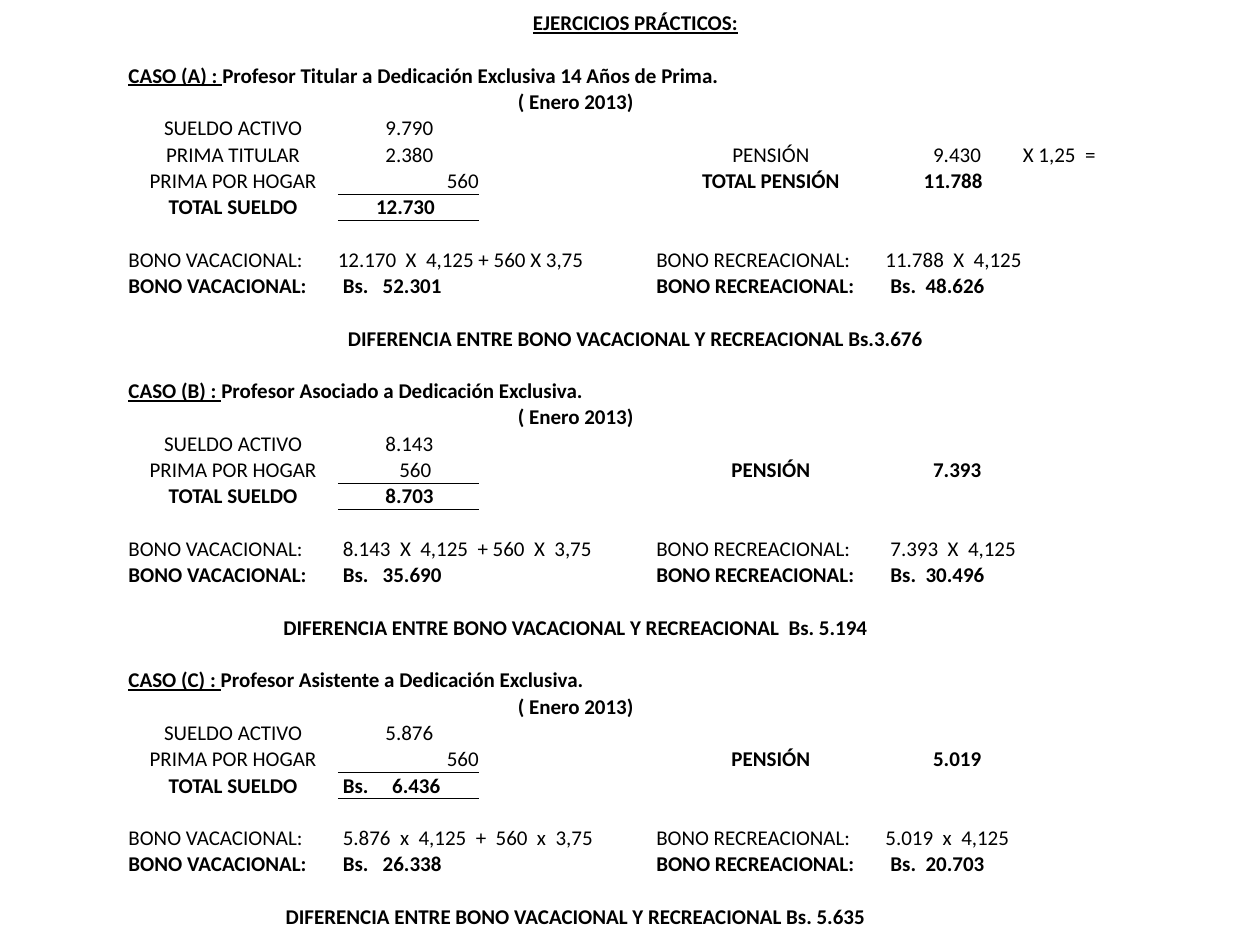
from dataclasses import dataclass

from lxml import etree
from pptx import Presentation
from pptx.dml.color import RGBColor
from pptx.enum.text import MSO_ANCHOR, PP_ALIGN
from pptx.oxml.ns import qn
from pptx.util import Cm, Pt

LEFT, CENTER, RIGHT = PP_ALIGN.LEFT, PP_ALIGN.CENTER, PP_ALIGN.RIGHT
BOTTOM = MSO_ANCHOR.BOTTOM


@dataclass(frozen=True)
class Theme:
    font: str = "Calibri"
    size: int = 12
    filler_size: int = 6
    ink: str = "000000"
    rule_width: float = 0.5
    plain_table: str = "{2D5ABB26-0587-4C30-8999-92F81FD0307C}"


THEME = Theme()

# Content: salary lines are (label, amount, indent in cm, pension);
# an indent of None sets the amount flush right.
# Pension is (label, amount, indent in cm, bold, factor).
TITLE = "EJERCICIOS PRÁCTICOS:"
DATE = "( Enero 2013)"
CASES = [
    {
        "name": "CASO (A) : ",
        "teacher": "Profesor Titular a Dedicación Exclusiva 14 Años de Prima.",
        "salary": [
            ("SUELDO ACTIVO", "9.790", 0.96, None),
            ("PRIMA TITULAR", "2.380", 0.96, ("PENSIÓN", "9.430", 0.96, False, "X 1,25  =")),
            ("PRIMA POR HOGAR", "560", None, ("TOTAL PENSIÓN", "11.788", 0.77, True, "")),
        ],
        "total": ("12.730", 0.77),
        "holiday": [("12.170  X  4,125 + 560 X 3,75", 0), ("Bs.   52.301", 0.1)],
        "leisure": [("11.788  X  4,125", 0), ("Bs.  48.626", 0.1)],
        "difference": ("DIFERENCIA ENTRE BONO VACACIONAL Y RECREACIONAL Bs.3.676", 6),
    },
    {
        "name": "CASO (B) : ",
        "teacher": "Profesor Asociado a Dedicación Exclusiva.",
        "salary": [
            ("SUELDO ACTIVO", "8.143", 0.96, None),
            ("PRIMA POR HOGAR", "560", 1.24, ("PENSIÓN", "7.393", 0.96, True, "")),
        ],
        "total": ("8.703", 0.96),
        "holiday": [("8.143  X  4,125  + 560  X  3,75", 0.1), ("Bs.   35.690", 0.1)],
        "leisure": [("7.393  X  4,125", 0.1), ("Bs.  30.496", 0.1)],
        "difference": ("DIFERENCIA ENTRE BONO VACACIONAL Y RECREACIONAL  Bs. 5.194", 5),
    },
    {
        "name": "CASO (C) : ",
        "teacher": "Profesor Asistente a Dedicación Exclusiva.",
        "salary": [
            ("SUELDO ACTIVO", "5.876", 0.96, None),
            ("PRIMA POR HOGAR", "560", None, ("PENSIÓN", "5.019", 0.96, True, "")),
        ],
        "total": ("Bs.     6.436", 0.1),
        "holiday": [("5.876  x  4,125  +  560  x  3,75", 0.1), ("Bs.   26.338", 0.1)],
        "leisure": [("5.019  x  4,125", 0), ("Bs.  20.703", 0.1)],
        "difference": ("DIFERENCIA ENTRE BONO VACACIONAL Y RECREACIONAL Bs. 5.635", 5),
    },
]

# Layout in cm
TABLE_LEFT, TABLE_TOP = 2.59, 0.2
COLUMNS = [4.22, 2.84, 3.58, 4.62, 2.77, 2.41]
ROW_HEIGHT, FILLER_HEIGHT = 0.53, 0.3
LABEL, AMOUNT, PENSION, PENSION_AMOUNT, FACTOR = 0, 1, 3, 4, 5
# Title and gap, then per case: heading, date, salary, total, four bonus
# and gap rows, difference and closing row
ROW_COUNT = 2 + sum(len(case["salary"]) + 9 for case in CASES)


def add_span(para, text, bold=False, underline=False):
    span = para.add_run()
    span.text = text
    font = span.font
    font.name, font.size = THEME.font, Pt(THEME.size)
    font.bold, font.underline = bold, underline
    font.color.rgb = RGBColor.from_string(THEME.ink)


def write(table, row, column, text, bold=False, align=LEFT, indent=0, width=1, underline=False):
    cell = table.cell(row, column)
    if width > 1:
        cell.merge(table.cell(row, column + width - 1))
    cell.margin_left = Cm(indent)
    para = cell.text_frame.paragraphs[0]
    para.alignment = align
    if text:
        add_span(para, text, bold, underline)
    return para


def add_rule(cell, side):
    line = etree.Element(qn(f"a:{side}"), w=str(Pt(THEME.rule_width)))
    fill = etree.SubElement(line, qn("a:solidFill"))
    etree.SubElement(fill, qn("a:srgbClr"), val=THEME.ink)
    cell._tc.get_or_add_tcPr().insert(0, line)


def add_plain_table(page):
    frame = page.shapes.add_table(
        ROW_COUNT, len(COLUMNS), Cm(TABLE_LEFT), Cm(TABLE_TOP),
        Cm(sum(COLUMNS)), Cm(ROW_HEIGHT * (ROW_COUNT - 1) + FILLER_HEIGHT))
    table = frame.table
    table.first_row = table.horz_banding = False
    table._tbl.tblPr.find(qn("a:tableStyleId")).text = THEME.plain_table
    for column, width in zip(table.columns, COLUMNS):
        column.width = Cm(width)
    for index, row in enumerate(table.rows):
        filler = index == ROW_COUNT - 1
        row.height = Cm(FILLER_HEIGHT if filler else ROW_HEIGHT)
        size = THEME.filler_size if filler else THEME.size
        for cell in row.cells:
            cell.fill.background()
            cell.vertical_anchor = BOTTOM
            cell.margin_left = cell.margin_right = cell.margin_top = cell.margin_bottom = 0
            # Empty cells keep the height of a text line
            para = cell.text_frame.paragraphs[0]
            etree.SubElement(para._p, qn("a:endParaRPr"), sz=str(size * 100))
    return table


def write_case(table, row, case):
    # Heading and date
    para = write(table, row, LABEL, case["name"], True, width=4, underline=True)
    add_span(para, case["teacher"], True)
    write(table, row + 1, LABEL, DATE, True, CENTER, width=5)
    row += 2

    # Salary and pension
    for label, amount, indent, pension in case["salary"]:
        write(table, row, LABEL, label, align=CENTER)
        align = RIGHT if indent is None else LEFT
        write(table, row, AMOUNT, amount, align=align, indent=indent or 0)
        if pension:
            name, value, value_indent, bold, factor = pension
            write(table, row, PENSION, name, bold, CENTER)
            write(table, row, PENSION_AMOUNT, value, bold, indent=value_indent)
            write(table, row, FACTOR, factor)
        row += 1

    # Total under a rule
    total, indent = case["total"]
    add_rule(table.cell(row - 1, AMOUNT), "lnB")
    add_rule(table.cell(row, AMOUNT), "lnT")
    write(table, row, LABEL, "TOTAL SUELDO", True, CENTER)
    write(table, row, AMOUNT, total, True, indent=indent)
    row += 2

    # Bonuses: formula, then result in bold
    bonuses = [(LABEL, "BONO VACACIONAL:", case["holiday"]),
               (PENSION, "BONO RECREACIONAL:", case["leisure"])]
    for column, label, lines in bonuses:
        for step, (text, indent) in enumerate(lines):
            bold = step == 1
            write(table, row + step, column, label, bold)
            write(table, row + step, column + 1, text, bold, indent=indent, width=1 if bold else 2)
    row += 3

    # Difference
    text, width = case["difference"]
    write(table, row, LABEL, text, True, CENTER, width=width)
    return row + 2


def main():
    deck = Presentation()
    deck.slide_width, deck.slide_height = Cm(25.4), Cm(19.05)
    page = deck.slides.add_slide(deck.slide_layouts[6])
    table = add_plain_table(page)
    write(table, 0, LABEL, TITLE, True, CENTER, width=len(COLUMNS), underline=True)
    row = 2
    for case in CASES:
        row = write_case(table, row, case)
    table.cell(ROW_COUNT - 1, LABEL).merge(table.cell(ROW_COUNT - 1, AMOUNT))
    deck.save("out.pptx")


if __name__ == "__main__":
    main()
